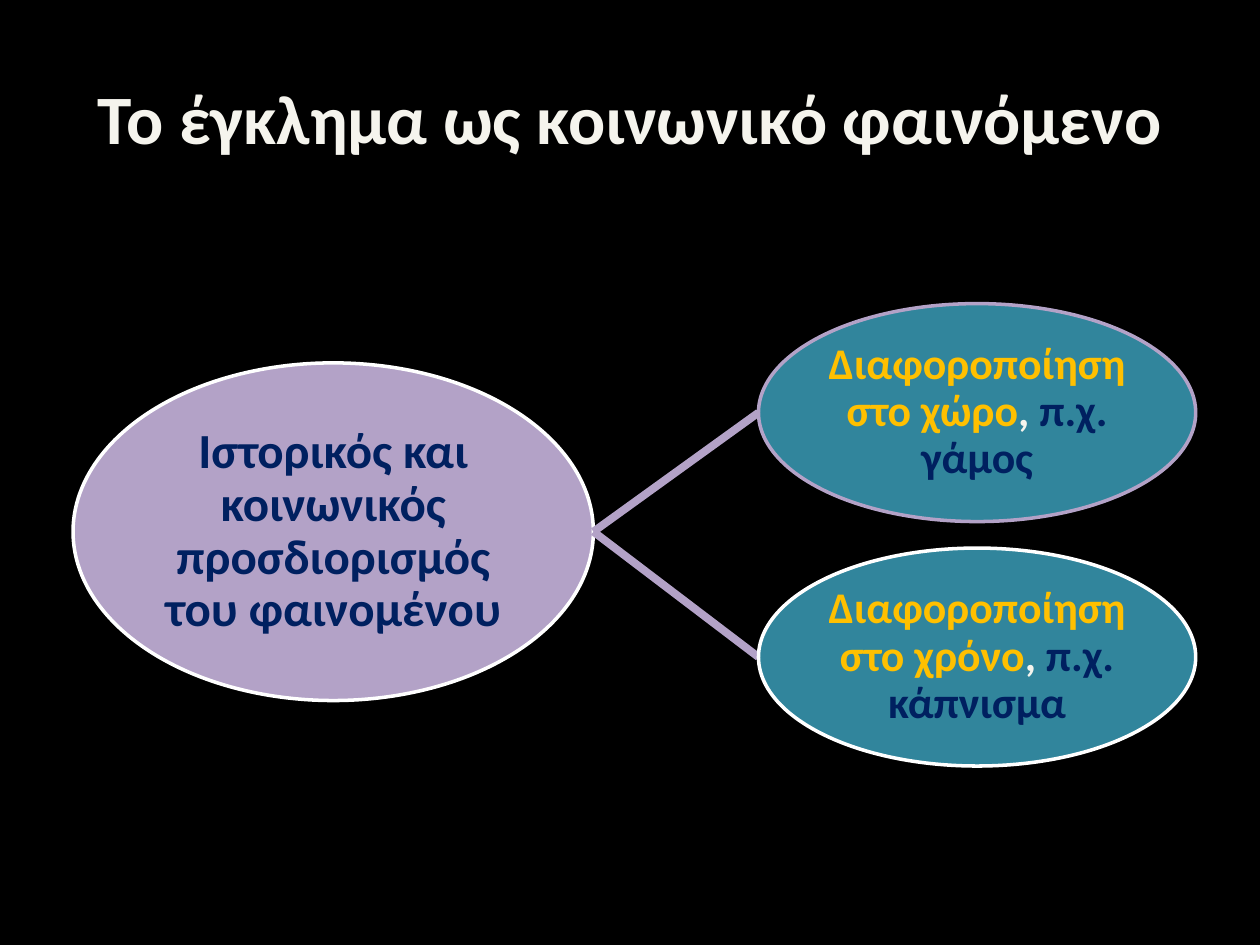
import pptx
import pptx.util
import pptx.dml.color
import pptx.enum.shapes
import pptx.enum.text
from lxml import etree
from pptx.oxml.ns import qn
from pptx.util import Inches, Pt

COLORS = {
    "black": "000000",
    "cream": "F5F4ED",
    "white": "FFFFFF",
    "lilac": "B3A2C7",
    "teal": "31859C",
    "navy": "002060",
    "gold": "FFC000",
}
CENTER = pptx.enum.text.PP_ALIGN.CENTER
MIDDLE = pptx.enum.text.MSO_ANCHOR.MIDDLE


def rgb(name):
    return pptx.dml.color.RGBColor.from_string(COLORS[name])


def add_bubble(box, fill, outline, size, parts):
    """Add an ellipse whose text is a list of (wording, color) parts."""
    bubble = slide.shapes.add_shape(
        pptx.enum.shapes.MSO_SHAPE.OVAL, *[Inches(length) for length in box])
    bubble.shadow.inherit = False
    bubble.fill.solid()
    bubble.fill.fore_color.rgb = rgb(fill)
    bubble.line.color.rgb = rgb(outline)
    bubble.line.width = Pt(2)
    frame = bubble.text_frame
    frame.word_wrap = True
    frame.vertical_anchor = MIDDLE
    frame.margin_left = frame.margin_right = Inches(0.02)
    frame.margin_top = frame.margin_bottom = Inches(0.02)
    paragraph = frame.paragraphs[0]
    paragraph.alignment = CENTER
    paragraph.line_spacing = 0.9
    paragraph.font.name = "Calibri"
    paragraph.font.size = Pt(size)
    paragraph.font.bold = True
    for wording, color in parts:
        run = paragraph.add_run()
        run.text = wording
        run.font.color.rgb = rgb(color)


deck = pptx.Presentation()
deck.slide_width, deck.slide_height = Inches(10), Inches(7.5)
slide = deck.slides.add_slide(deck.slide_layouts[5])
slide.background.fill.solid()
slide.background.fill.fore_color.rgb = rgb("black")

title = slide.shapes.title
title.left, title.top = Inches(0.5), Inches(0.3)
title.width, title.height = Inches(9), Inches(1.25)
title.text_frame.text = "Το έγκλημα ως κοινωνικό φαινόμενο"
title.text_frame.vertical_anchor = MIDDLE
heading = title.text_frame.paragraphs[0]
heading.alignment = CENTER
heading.font.name = "Calibri"
heading.font.size = Pt(39.6)
heading.font.bold = True
heading.font.color.rgb = rgb("cream")

cause_left, cause_top, cause_width, cause_height = 0.58, 2.88, 4.13, 2.68
add_bubble((cause_left, cause_top, cause_width, cause_height),
           "lilac", "white", 28,
           [("Ιστορικός και κοινωνικός προσδιορισμός του φαινομένου", "navy")])

branch_left, branch_width, branch_height = 6.02, 3.47, 1.73
branches = [
    (2.41, "lilac", "Διαφοροποίηση στο χώρο", "π.χ. γάμος"),
    (4.35, "white", "Διαφοροποίηση στο χρόνο", "π.χ. κάπνισμα"),
]
for top, outline, difference, example in branches:
    link = slide.shapes.add_connector(
        pptx.enum.shapes.MSO_CONNECTOR.STRAIGHT,
        Inches(cause_left + cause_width), Inches(cause_top + cause_height / 2),
        Inches(branch_left), Inches(top + branch_height / 2))
    link.line.color.rgb = rgb("lilac")
    link.line.width = Pt(4.5)
    etree.SubElement(link._element.spPr, qn("a:effectLst"))
    add_bubble((branch_left, top, branch_width, branch_height),
               "teal", outline, 25,
               [(difference, "gold"), (", ", "cream"), (example, "navy")])

deck.save("out.pptx")
